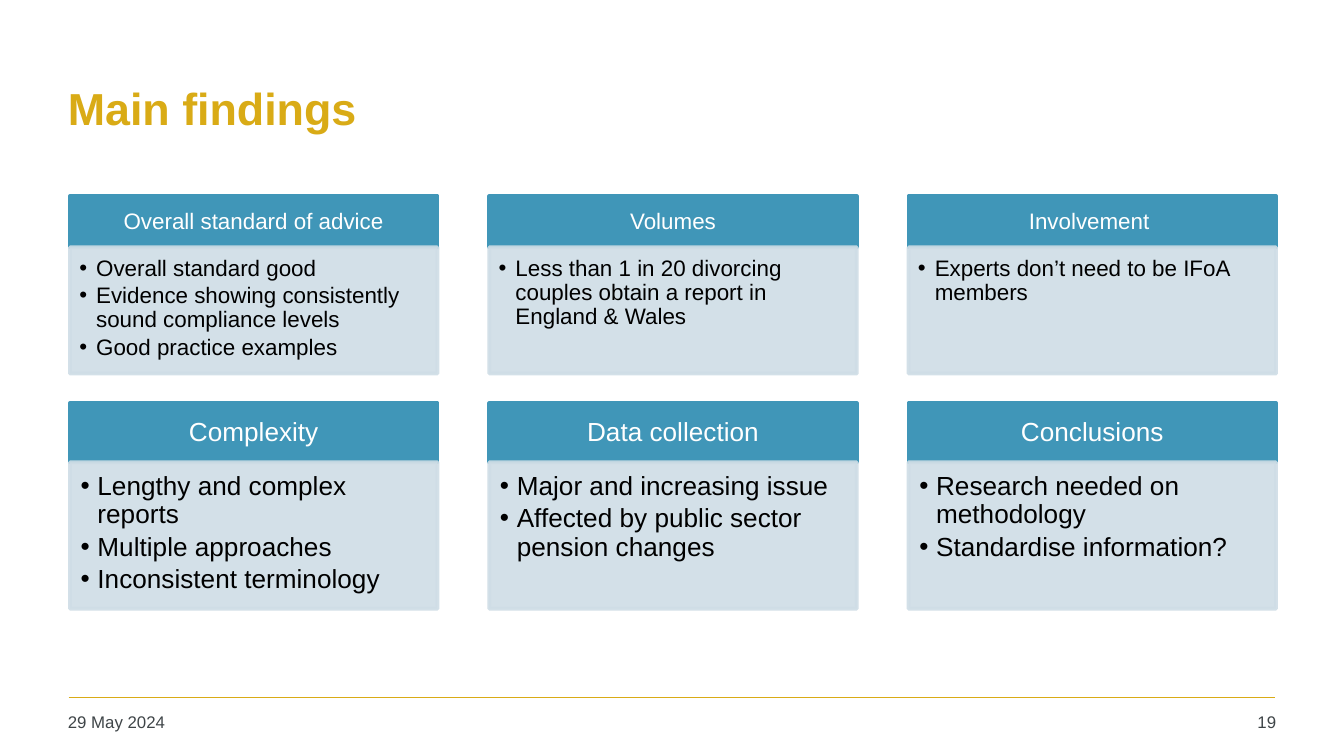
from lxml.etree import SubElement
from pptx import Presentation
from pptx.dml.color import RGBColor
from pptx.enum.shapes import MSO_CONNECTOR, MSO_SHAPE
from pptx.enum.text import MSO_ANCHOR, PP_ALIGN
from pptx.oxml.ns import qn
from pptx.util import Inches, Pt

GOLD = RGBColor(0xD9, 0xAB, 0x16)
GREY = RGBColor(0x3F, 0x45, 0x48)
BLUE = RGBColor(0x40, 0x96, 0xB8)
PALE = RGBColor(0xCF, 0xDD, 0xE6)
WHITE = RGBColor(0xFF, 0xFF, 0xFF)
BLACK = RGBColor(0x00, 0x00, 0x00)

WIDTH = Inches(10)
HEIGHT = WIDTH * 9 // 16
GRID = 100
CARD_LEFT, CARD_WIDTH, CARD_STEP = 5.2, 27.35, 31.2

CARD_ROWS = [
    {
        "top": 25.96, "header": 6.76, "body": 16.71, "size": 12,
        "header_insets": (0.09, 0.05, 0.09, 0.05),
        "body_insets": (0.07, 0.07, 0.09, 0.1),
        "cards": [
            ("Overall standard of advice", [
                "Overall standard good",
                "Evidence showing consistently sound compliance levels",
                "Good practice examples",
            ]),
            ("Volumes", [
                "Less than 1 in 20 divorcing couples obtain a report in England & Wales",
            ]),
            ("Involvement ", ["Experts don’t need to be IFoA members"]),
        ],
    },
    {
        "top": 53.33, "header": 7.82, "body": 19.38, "size": 14,
        "header_insets": (0.11, 0.06, 0.11, 0.06),
        "body_insets": (0.08, 0.08, 0.11, 0.12),
        "cards": [
            ("Complexity", [
                "Lengthy and complex reports",
                "Multiple approaches",
                "Inconsistent terminology",
            ]),
            ("Data collection", [
                "Major and increasing issue",
                "Affected by public sector pension changes",
            ]),
            ("Conclusions", [
                "Research needed on methodology",
                "Standardise information?",
            ]),
        ],
    },
]


def place(box):
    left, top, width, height = box
    across, down = WIDTH / GRID, HEIGHT / GRID
    return [int(v) for v in (left * across, top * down, width * across, height * down)]


def apply(target, values):
    for name, value in values.items():
        setattr(target, name, value)


def write(frame, lines, size, color, insets=(0.07, 0.04, 0.07, 0.04),
          anchor=MSO_ANCHOR.TOP, bold=False, bullet=False, **para_format):
    sides = ("margin_left", "margin_top", "margin_right", "margin_bottom")
    apply(frame, dict(zip(sides, map(Inches, insets))))
    apply(frame, {"word_wrap": True, "vertical_anchor": anchor})
    for index, line in enumerate(lines):
        para = frame.paragraphs[0] if index == 0 else frame.add_paragraph()
        if bullet:
            add_bullet(para)
        apply(para, para_format)
        span = para.add_run()
        span.text = line
        apply(span.font, {"name": "Arial", "size": Pt(size), "bold": bold})
        span.font.color.rgb = color


def add_bullet(para):
    properties = para._p.get_or_add_pPr()
    properties.set("marL", str(Pt(9)))
    properties.set("indent", str(Pt(-9)))
    SubElement(properties, qn("a:buFont")).set("typeface", "Arial")
    SubElement(properties, qn("a:buChar")).set("char", "•")


def add_panel(page, box, color, opacity=100):
    panel = page.shapes.add_shape(MSO_SHAPE.RECTANGLE, *place(box))
    panel.shadow.inherit = False
    panel.line.width = Pt(2)
    for fill in (panel.fill, panel.line.fill):
        fill.solid()
        fill.fore_color.rgb = color
    if opacity < 100:
        for shade in panel._element.spPr.iter(qn("a:srgbClr")):
            SubElement(shade, qn("a:alpha")).set("val", str(opacity * 1000))
    return panel


def add_label(page, box, text, size, color, **text_format):
    label = page.shapes.add_textbox(*place(box))
    write(label.text_frame, [text], size, color, **text_format)


def add_card(page, box, row, heading, points):
    left, top, width, height = box
    size = row["size"]
    header = add_panel(page, (left, top, width, row["header"]), BLUE)
    write(header.text_frame, [heading], size, WHITE, row["header_insets"],
          MSO_ANCHOR.MIDDLE, alignment=PP_ALIGN.CENTER, line_spacing=0.9)
    body_box = (left, top + row["header"], width, height - row["header"])
    body = add_panel(page, body_box, PALE, opacity=90)
    write(body.text_frame, points, size, BLACK, row["body_insets"], bullet=True,
          alignment=PP_ALIGN.LEFT, line_spacing=0.9, space_after=Pt(size * 0.15))


def add_card_row(page, row):
    for column, (heading, points) in enumerate(row["cards"]):
        box = (CARD_LEFT + column * CARD_STEP, row["top"], CARD_WIDTH,
               row["header"] + row["body"])
        add_card(page, box, row, heading, points)


def add_footer(page, box):
    left, top, width, height = box
    start_x, start_y, length, _ = place((left + 0.75, top, width - 1.5, height))
    rule = page.shapes.add_connector(
        MSO_CONNECTOR.STRAIGHT, start_x, start_y, start_x + length, start_y)
    rule.line.color.rgb = GOLD
    rule.line.width = Pt(1)
    SubElement(rule._element.spPr, qn("a:effectLst"))
    text_top, text_height = top + 1.2, height - 1.2
    add_label(page, (left, text_top, 22, text_height), "29 May 2024", 9, GREY)
    add_label(page, (left + width - 7.1, text_top, 7.1, text_height), "19", 9, GREY,
              alignment=PP_ALIGN.RIGHT)


def main():
    deck = Presentation()
    apply(deck, {"slide_width": WIDTH, "slide_height": HEIGHT})
    page = deck.slides.add_slide(deck.slide_layouts[6])
    add_footer(page, (4.35, 92.27, 91.3, 6.1))
    add_label(page, (4.35, 5.87, 90.7, 16.71), "Main findings", 24, GOLD,
              anchor=MSO_ANCHOR.MIDDLE, bold=True)
    for row in CARD_ROWS:
        add_card_row(page, row)
    deck.save("out.pptx")


if __name__ == "__main__":
    main()
